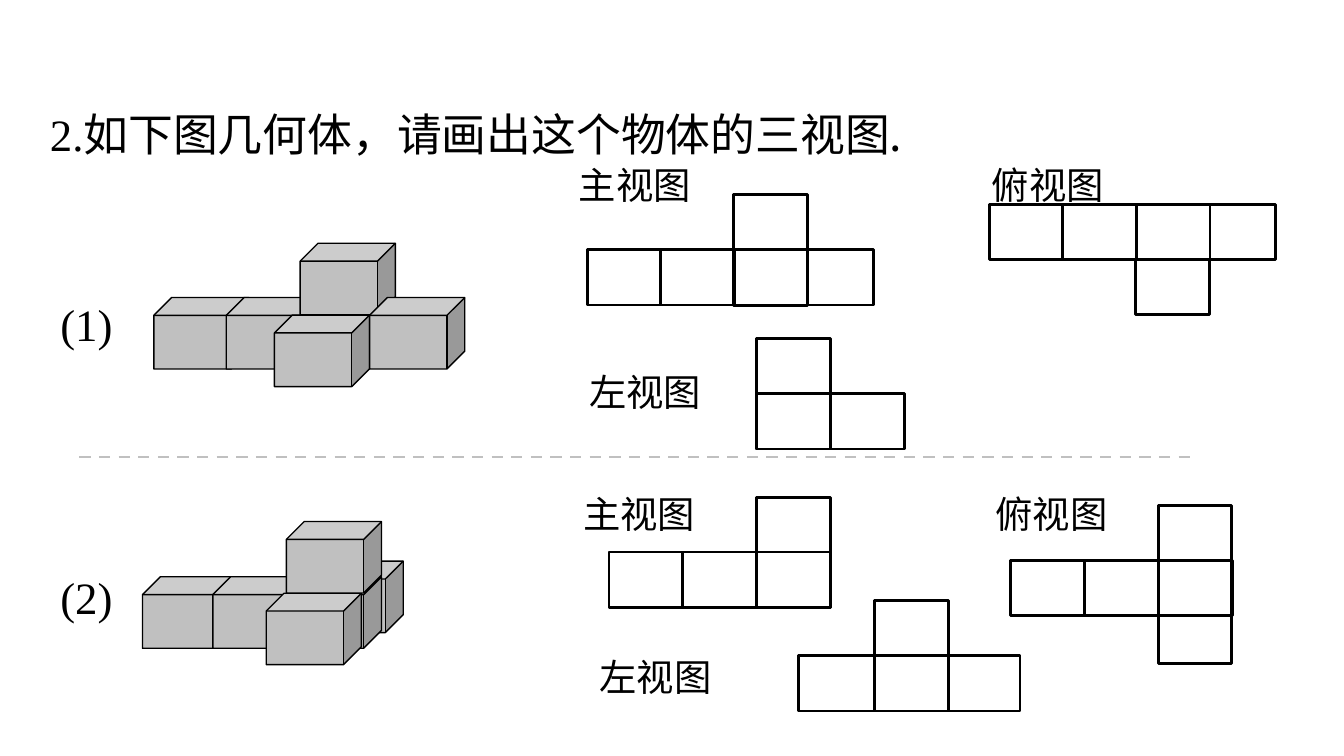
from dataclasses import dataclass

from lxml import etree
from pptx import Presentation
from pptx.dml.color import RGBColor
from pptx.enum import dml, shapes, text
from pptx.oxml import ns
from pptx.util import Pt


@dataclass(frozen=True)
class Theme:
    """Colours, fonts and sizes of the exercise."""
    ink: RGBColor = RGBColor(0, 0, 0)
    grey: RGBColor = RGBColor(0xC0, 0xC0, 0xC0)
    serif: str = "Times New Roman"
    sans: str = "Arial"
    chinese: str = "Noto Sans CJK SC"
    large: float = 24
    small: float = 20
    thin: float = 0.75
    thick: float = 1.5
    cell_width: float = 39.4
    cell_height: float = 29.6
    cube_width: float = 51
    cube_height: float = 38.3


class Exercise:
    """Draws the elements of an exercise on one slide."""

    def __init__(self, slide, theme):
        """Keep the slide and its theme."""
        self.slide = slide
        self.theme = theme

    def question(self, number, wording, left, top, width, height):
        """Write the question into the title placeholder."""
        title = self.slide.shapes.title
        title.left, title.top, title.width, title.height = map(Pt, (left, top, width, height))
        frame = title.text_frame
        frame.auto_size = text.MSO_AUTO_SIZE.SHAPE_TO_FIT_TEXT
        frame.vertical_anchor = text.MSO_ANCHOR.MIDDLE
        line = frame.paragraphs[0]
        line.alignment = text.PP_ALIGN.LEFT
        line.line_spacing = 1.5
        for part, face in ((number, self.theme.serif), (wording, self.theme.chinese)):
            run = line.add_run()
            run.text = part
            run.font.name = face
            run.font.size = Pt(self.theme.large)
            run.font.color.rgb = self.theme.ink
            east_asian = etree.SubElement(run.font._element, ns.qn("a:ea"))
            east_asian.set("typeface", self.theme.chinese)

    def label(self, wording, left, top, width, height, face, size):
        """Add a one-line text."""
        box = self.slide.shapes.add_textbox(*map(Pt, (left, top, width, height)))
        frame = box.text_frame
        frame.word_wrap = False
        frame.auto_size = text.MSO_AUTO_SIZE.SHAPE_TO_FIT_TEXT
        line = frame.paragraphs[0]
        line.text = wording
        line.font.name = face
        line.font.size = Pt(size)
        line.font.color.rgb = self.theme.ink

    def number(self, wording, left, top):
        """Add the number of a solid."""
        self.label(wording, left, top, 42.5, 36, self.theme.serif, self.theme.large)

    def view_name(self, wording, left, top):
        """Add the name of a view."""
        self.label(wording, left, top, 75, 31.7, self.theme.sans, self.theme.small)

    def line(self, parent, start, end, color, dash=None):
        """Draw a straight line."""
        stroke = parent.shapes.add_connector(shapes.MSO_CONNECTOR.STRAIGHT, *map(Pt, start + end))
        stroke.line.color.rgb = color
        stroke.line.width = Pt(self.theme.thick)
        stroke.line.dash_style = dash
        etree.SubElement(stroke._element.spPr, ns.qn("a:effectLst"))

    def outlined(self, parent, kind, box, weight, fill=None):
        """Draw an outlined shape, hollow unless a fill is given."""
        shape = parent.shapes.add_shape(kind, *map(Pt, box))
        shape.shadow.inherit = False
        shape.line.color.rgb = self.theme.ink
        shape.line.width = Pt(weight)
        if fill is None:
            shape.fill.background()
        else:
            shape.fill.solid()
            shape.fill.fore_color.rgb = fill

    def solid(self, corners):
        """Stack cubes from back to front."""
        group = self.slide.shapes.add_group_shape()
        size = (self.theme.cube_width, self.theme.cube_height)
        for corner in corners:
            self.outlined(group, shapes.MSO_SHAPE.CUBE, corner + size, self.theme.thin, self.theme.grey)

    def view(self, left, top, width, dividers, tower_left, tower_top, tower_cells):
        """Draw a row of cells crossed or joined by a column."""
        group = self.slide.shapes.add_group_shape()
        cell_width, cell_height = self.theme.cell_width, self.theme.cell_height
        rect = shapes.MSO_SHAPE.RECTANGLE
        self.outlined(group, rect, (left, top, width, cell_height), self.theme.thick)
        for column in range(1, dividers + 1):
            x = left + column * cell_width
            self.line(group, (x, top), (x, top + cell_height), self.theme.ink)
        tower = (tower_left, tower_top, cell_width, tower_cells * cell_height)
        self.outlined(group, rect, tower, self.theme.thick)


def main():
    """Build the three-view exercise."""
    deck = Presentation()
    deck.slide_width, deck.slide_height = Pt(720), Pt(405)
    theme = Theme()
    exercise = Exercise(deck.slides.add_slide(deck.slide_layouts[5]), theme)
    exercise.question("2.", "如下图几何体，请画出这个物体的三视图.", 19.5, 39, 674.5, 51)

    exercise.solid([(82.4, 159.4), (121.2, 159.4), (147, 168.8), (160.8, 130.3), (198, 159.4)])
    exercise.solid([(165, 300.6), (76.3, 309), (114, 309), (153.4, 309), (142.6, 317.8), (153.4, 279.4)])
    for wording, top in (("(1)", 155.5), ("(2)", 301.7)):
        exercise.number(wording, 25.2, top)
    exercise.line(exercise.slide, (42.5, 244.8), (638, 244.8), theme.grey, dml.MSO_LINE.DASH)

    for wording, left, top in (
        ("主视图", 303.1, 83.5), ("左视图", 308.5, 194), ("俯视图", 524.2, 83.5),
        ("主视图", 305.3, 259.5), ("左视图", 314, 347.2), ("俯视图", 526.3, 259.5),
    ):
        exercise.view_name(wording, left, top)

    four_cells, three_cells, two_cells = 153.4, 118.8, 79.2
    for view in (
        (530, 109.5, four_cells, 3, 608.4, 139.1, 1),
        (405.4, 211, two_cells, 0, 405.4, 181.4, 2),
        (314.6, 133.9, four_cells, 3, 393.1, 104.4, 2),
        (326.2, 295.8, three_cells, 1, 405.4, 266.4, 2),
        (541.4, 300.2, three_cells, 1, 620.6, 270.7, 2.87),
        (427.7, 351.4, three_cells, 0, 468.7, 321.8, 2),
    ):
        exercise.view(*view)
    deck.save("out.pptx")


if __name__ == "__main__":
    main()
